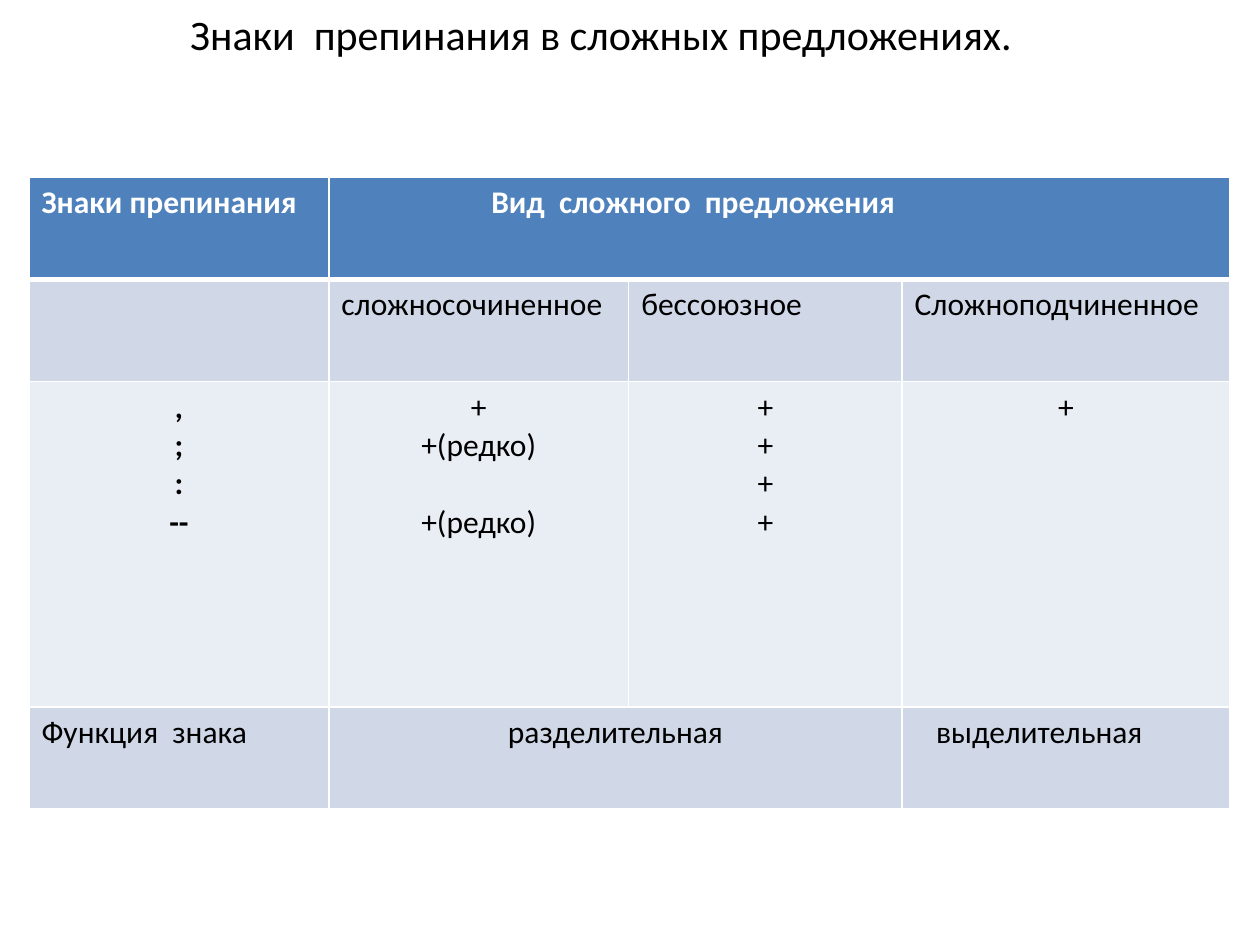
from lxml.etree import SubElement
from pptx import Presentation
from pptx.dml.color import RGBColor
from pptx.enum.text import MSO_ANCHOR, PP_ALIGN
from pptx.oxml.ns import qn
from pptx.util import Inches, Pt

FONT = "Calibri"
BLACK = RGBColor(0x00, 0x00, 0x00)
WHITE = RGBColor(0xFF, 0xFF, 0xFF)
HEADER_BLUE = RGBColor(0x4F, 0x81, 0xBD)
BAND_DARK = RGBColor(0xD0, 0xD8, 0xE8)
BAND_LIGHT = RGBColor(0xE9, 0xED, 0xF4)

TITLE = "Знаки  препинания в сложных предложениях."
ROWS = [
    ["Знаки препинания", "Вид  сложного  предложения", "", ""],
    ["", "сложносочиненное", "бессоюзное", "Сложноподчиненное"],
    [",\n;\n:\n--", "+\n+(редко)\n\n+(редко)", "+\n+\n+\n+", "+"],
    ["Функция  знака", "разделительная", "", "выделительная"],
]
COLUMN_WIDTHS = [2.38, 2.38, 2.17, 2.6]
ROW_HEIGHTS = [0.81, 0.81, 2.58, 0.81]
ROW_FILLS = [HEADER_BLUE, BAND_DARK, BAND_LIGHT, BAND_DARK]
MERGES = [((0, 1), (0, 3)), ((3, 1), (3, 2))]
CENTERED = {(2, 0), (2, 1), (2, 2), (2, 3), (3, 1)}
LEFT_MARGINS = {(0, 1): 1.29, (3, 3): 0.27}
LINE_PITCH = 22  # points taken by one 18 pt line


def write_text(frame, text, size=18, color=BLACK, bold=False, align=PP_ALIGN.LEFT):
    """Write one paragraph per line; an empty line becomes space before the next."""
    gap = 0
    paragraph = frame.paragraphs[0]
    for line in text.split("\n"):
        if not line:
            gap += LINE_PITCH
            continue
        if paragraph.runs:
            paragraph = frame.add_paragraph()
        paragraph.alignment = align
        paragraph.space_before = Pt(gap)
        gap = 0
        run = paragraph.add_run()
        run.text = line
        run.font.name = FONT
        run.font.size = Pt(size)
        run.font.bold = bold
        run.font.color.rgb = color


def set_borders(cell, top=1, bottom=1):
    properties = cell._tc.get_or_add_tcPr()
    for side, width in (("L", 1), ("R", 1), ("T", top), ("B", bottom)):
        line = SubElement(properties, qn(f"a:ln{side}"), w=str(Pt(width)))
        fill = SubElement(line, qn("a:solidFill"))
        SubElement(fill, qn("a:srgbClr"), val=str(WHITE))


def add_title(slide):
    title = slide.shapes.title
    title.left, title.top = Inches(1.41), Inches(-0.47)
    title.width, title.height = Inches(7.75), Inches(1.48)
    title.text_frame.vertical_anchor = MSO_ANCHOR.MIDDLE
    write_text(title.text_frame, TITLE, size=24)


def add_punctuation_table(slide):
    table = slide.shapes.add_table(
        len(ROWS), len(COLUMN_WIDTHS), Inches(0.23), Inches(1.41),
        Inches(sum(COLUMN_WIDTHS)), Inches(sum(ROW_HEIGHTS))).table
    for column, width in zip(table.columns, COLUMN_WIDTHS):
        column.width = Inches(width)
    for row, height in zip(table.rows, ROW_HEIGHTS):
        row.height = Inches(height)
    for first, last in MERGES:
        table.cell(*first).merge(table.cell(*last))

    for r, texts in enumerate(ROWS):
        for c, text in enumerate(texts):
            cell = table.cell(r, c)
            set_borders(cell, top=3 if r == 1 else 1, bottom=3 if r == 0 else 1)
            cell.fill.solid()
            cell.fill.fore_color.rgb = ROW_FILLS[r]
            cell.margin_left = Inches(LEFT_MARGINS.get((r, c), 0.1))
            if text:
                write_text(
                    cell.text_frame, text,
                    color=WHITE if r == 0 else BLACK,
                    bold=r == 0 or (r, c) == (2, 0),
                    align=PP_ALIGN.CENTER if (r, c) in CENTERED else PP_ALIGN.LEFT)


def main():
    presentation = Presentation()
    presentation.slide_width, presentation.slide_height = Inches(10), Inches(7.5)
    slide = presentation.slides.add_slide(presentation.slide_layouts[5])
    add_title(slide)
    add_punctuation_table(slide)
    presentation.save("out.pptx")


if __name__ == "__main__":
    main()
